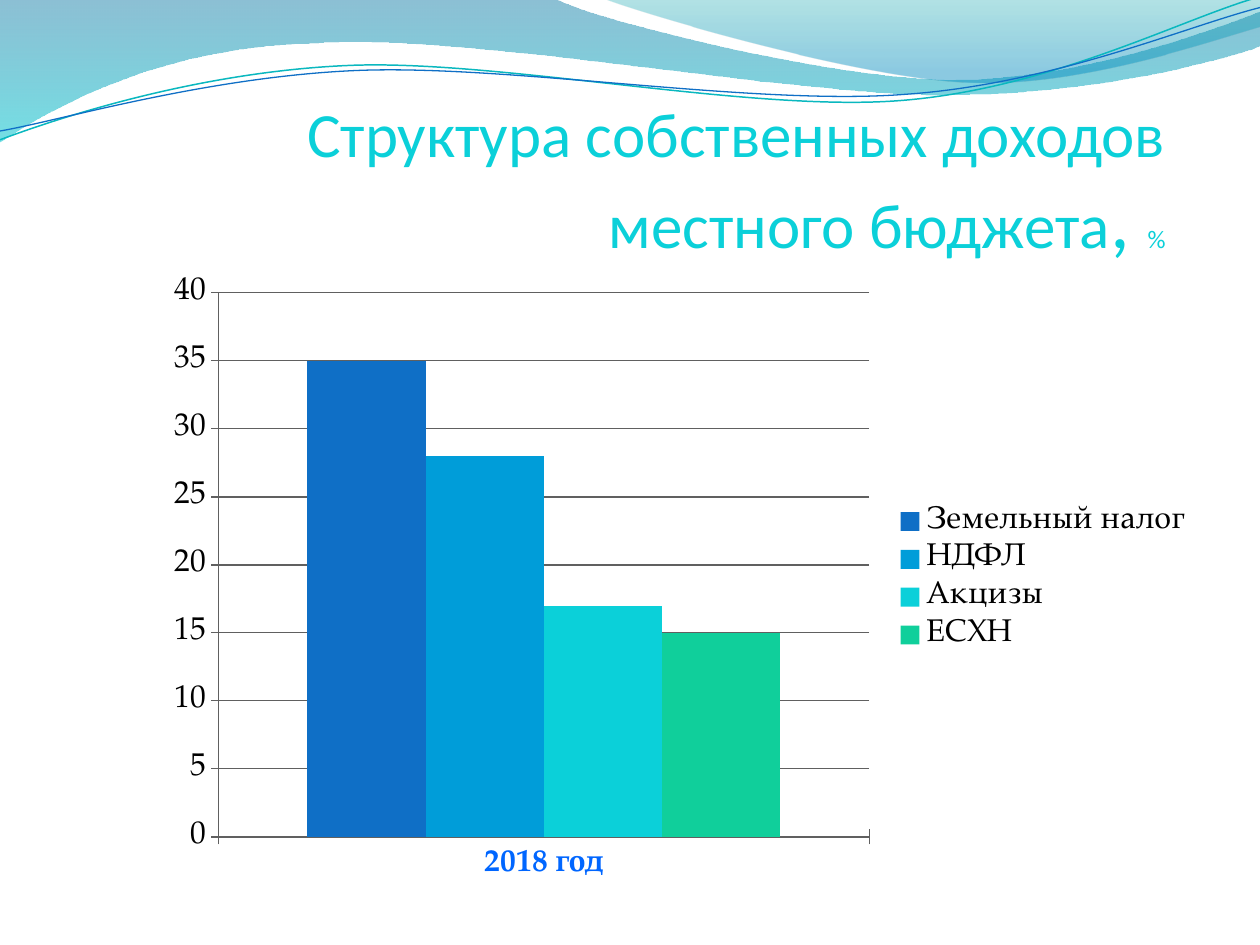
import lxml.etree
import pptx
import pptx.chart.data
import pptx.dml.color
import pptx.enum.chart
import pptx.enum.text
import pptx.oxml.ns
import pptx.util
from pptx.util import Inches

THEME = {
    "title": "0BD0D9", "text": "000000", "category": "0066FF", "axis": "606060",
    "teal_line": "0AB8BF", "blue_line": "0F6FC6",
    "series": ["0F6FC6", "009DD9", "0BD0D9", "10CF9B"],
    "title_font": "Calibri", "chart_font": "TeX Gyre Pagella",
    "title_pt": 36, "comma_pt": 45, "percent_pt": 14.4, "chart_pt": 18,
}


def rgb(name):
    return pptx.dml.color.RGBColor.from_string(THEME.get(name, name))


def add_wave(shapes, start, segments, close):
    """Draw an outline; a 2-tuple is a line, a 6-tuple a cubic Bezier curve."""
    points = [(Inches(seg[i]), Inches(seg[i + 1]))
              for seg in segments for i in range(0, len(seg), 2)]
    fb = shapes.build_freeform(Inches(start[0]), Inches(start[1]), scale=1.0)
    fb.add_line_segments(points, close=close)
    sp = fb.convert_to_shape()
    sp.shadow.inherit = False
    # Join each run of three points into one curve
    nodes = iter(list(sp._element.iter(pptx.oxml.ns.qn("a:lnTo"))))
    for seg in segments:
        first = next(nodes)
        if len(seg) == 6:
            curve = lxml.etree.Element(pptx.oxml.ns.qn("a:cubicBezTo"))
            first.addprevious(curve)
            for node in (first, next(nodes), next(nodes)):
                curve.append(node[0])
                node.getparent().remove(node)
    return sp


prs = pptx.Presentation()
prs.slide_width, prs.slide_height = Inches(10), Inches(7.5)
s = prs.slides.add_slide(prs.slide_layouts[6])
s.background.fill.solid()
s.background.fill.fore_color.rgb = rgb("FFFFFF")

# Filled waves: start, outline, gradient stops (position, colour, opacity %)
filled_waves = [
    ((0, 0),
     [(4.4, -0.01), (4.76, 0.17, 6.64, 0.63, 7.58, 0.63),
      (8.53, 0.63, 9.58, 0.26, 10, 0.09), (10.01, 0.36),
      (9.83, 0.44, 8.7, 0.76, 7.46, 0.75), (6.22, 0.75, 3.82, 0.28, 2.57, 0.34),
      (1.29, 0.36, 0.46, 0.83, -0.01, 1.13)],
     [(0, "0074A1", 45), (1, "00C6CF", 55)]),
    ((4.79, -0.01),
     [(5.09, 0.11, 6.82, 0.62, 7.69, 0.65), (8.56, 0.69, 9.61, 0.32, 10, 0.21),
      (10, 0)],
     [(0, "00A1A9", 30), (0.8, "008BBF", 45)]),
]
for start, segments, stops in filled_waves:
    sp = add_wave(s.shapes, start, segments, True)
    sp.line.fill.background()
    sp.fill.gradient()
    sp.fill.gradient_angle = 270
    for stop, (position, color, opacity) in zip(sp.fill.gradient_stops, stops):
        stop.position = position
        stop.color.rgb = rgb(color)
    clrs = sp._element.spPr.iter(pptx.oxml.ns.qn("a:srgbClr"))
    for clr, (position, color, opacity) in zip(list(clrs), stops):
        alpha = lxml.etree.SubElement(clr, pptx.oxml.ns.qn("a:alpha"))
        alpha.set("val", str(opacity * 1000))

# Thin wave lines
wave_lines = [
    ((0, 1.11),
     [(0.48, 0.93, 1.58, 0.57, 2.77, 0.52), (3.95, 0.47, 5.93, 0.89, 7.13, 0.8),
      (8.33, 0.71, 9.38, 0.15, 9.98, -0.02)], "teal_line", 0.85),
    ((0, 1.04),
     [(0.47, 0.96, 1.64, 0.61, 2.83, 0.56), (4.03, 0.51, 5.97, 0.84, 7.17, 0.75),
      (8.36, 0.67, 9.41, 0.21, 10, 0.06)], "blue_line", 0.75),
]
for start, segments, color, width in wave_lines:
    sp = add_wave(s.shapes, start, segments, False)
    sp.fill.background()
    sp.line.color.rgb = rgb(color)
    sp.line.width = pptx.util.Pt(width)

# Title
tf = s.shapes.add_textbox(Inches(0.43), Inches(0.68), Inches(8.82), Inches(1.42)).text_frame
tf.word_wrap = True
tf.vertical_anchor = pptx.enum.text.MSO_ANCHOR.BOTTOM
tf.margin_left = tf.margin_right = tf.margin_bottom = 0
tf.margin_top = Inches(0.05)
p = tf.paragraphs[0]
p.alignment = pptx.enum.text.PP_ALIGN.RIGHT
for text, size in [("Структура собственных доходов местного бюджета", "title_pt"),
                   (", ", "comma_pt"), ("%", "percent_pt")]:
    r = p.add_run()
    r.text = text
    r.font.size = pptx.util.Pt(THEME[size])
    r.font.name = THEME["title_font"]
    r.font.color.rgb = rgb("title")

# Column chart
data = pptx.chart.data.CategoryChartData()
data.categories = ["2018 год"]
for name, value in [("Земельный налог", 35), ("НДФЛ", 28), ("Акцизы", 17), ("ЕСХН", 15)]:
    data.add_series(name, [value])
chart = s.shapes.add_chart(
    pptx.enum.chart.XL_CHART_TYPE.COLUMN_CLUSTERED,
    Inches(1.22), Inches(2.1), Inches(8.35), Inches(4.98), data).chart
chart.has_title = False
chart.font.name = THEME["chart_font"]
chart.font.size = pptx.util.Pt(THEME["chart_pt"])
chart.font.color.rgb = rgb("text")
chart.has_legend = True
chart.legend.position = pptx.enum.chart.XL_LEGEND_POSITION.RIGHT
chart.legend.include_in_layout = False

plot = chart.plots[0]
plot.vary_by_categories = False
plot.gap_width = 150
plot.overlap = 0
for series, color in zip(plot.series, THEME["series"]):
    series.format.fill.solid()
    series.format.fill.fore_color.rgb = rgb(color)

# Axes
cat, val = chart.category_axis, chart.value_axis
val.has_major_gridlines = True
for line in (cat.format.line, val.format.line, val.major_gridlines.format.line):
    line.color.rgb = rgb("axis")
for axis in (cat, val):
    axis.major_tick_mark = pptx.enum.chart.XL_TICK_MARK.CROSS
font = cat.tick_labels.font
font.bold = True
font.size = pptx.util.Pt(THEME["chart_pt"])
font.name = THEME["chart_font"]
font.color.rgb = rgb("category")

prs.save("out.pptx")
